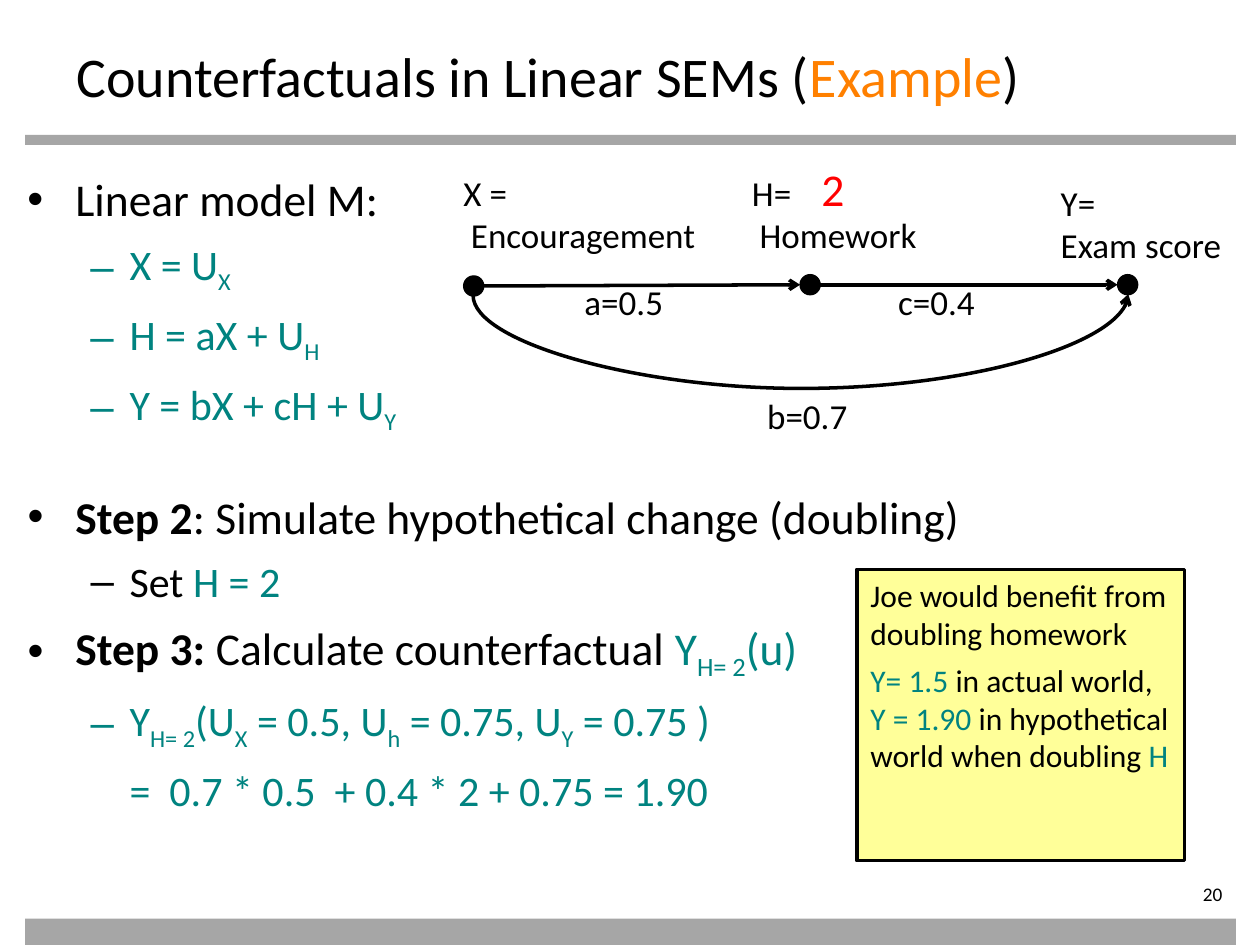
from pptx import Presentation
from pptx.dml.color import RGBColor
from pptx.enum.shapes import MSO_CONNECTOR as CONN, MSO_SHAPE as SHAPE
from pptx.enum.text import PP_ALIGN as ALIGN
from pptx.oxml.ns import qn
from pptx.util import Inches, Pt
from lxml.etree import SubElement

COLORS = {"black": "000000", "orange": "FF8000", "teal": "008380",
          "red": "FF0000", "gray": "A6A6A6", "yellow": "FFFF99"}


def rgb(name):
    return RGBColor.from_string(COLORS[name])


def add_runs(p, text, size=20, color="black", bold=False):
    """Write text in which every second part between bars is a subscript."""
    for i, part in enumerate(text.split("|")):
        if not part:
            continue
        r = p.add_run()
        r.text = part
        r.font.name = "Calibri"
        r.font.size = Pt(size)
        r.font.bold = bold
        r.font.color.rgb = rgb(color)
        if i % 2:
            r.font._element.set("baseline", "-25000")


def add_paragraph(tf, runs, size=20, first=False, bullet=None, left=0, hang=0,
                  gap=0, align=ALIGN.LEFT):
    """Runs are (text, format) pairs; gap is a share of the text size."""
    p = tf.paragraphs[0] if first else tf.add_paragraph()
    pPr = p._p.get_or_add_pPr()
    pPr.set("marL", str(Inches(left)))
    pPr.set("indent", str(-Inches(hang)))
    if bullet:
        SubElement(pPr, qn("a:buFont")).set("typeface", "Arial")
        SubElement(pPr, qn("a:buChar")).set("char", bullet)
    else:
        SubElement(pPr, qn("a:buNone"))
    p.alignment = align
    if gap and not first:
        p.space_before = Pt(gap * size)
    for text, fmt in runs:
        add_runs(p, text, size=size, **fmt)


def add_text(slide, x, y, w, h, wrap=True):
    sp = slide.shapes.add_textbox(Inches(x), Inches(y), Inches(w), Inches(h))
    sp.text_frame.word_wrap = wrap
    return sp.text_frame


def add_filled(slide, kind, x, y, w, h, fill, line=None):
    sp = slide.shapes.add_shape(kind, Inches(x), Inches(y), Inches(w), Inches(h))
    sp.shadow.inherit = False
    sp.fill.solid()
    sp.fill.fore_color.rgb = rgb(fill)
    if line:
        sp.line.color.rgb = rgb("black")
        sp.line.width = Pt(line)
    else:
        sp.line.fill.background()
    return sp


def add_arrow(slide, kind, x1, y1, x2, y2):
    cx = slide.shapes.add_connector(kind, Inches(x1), Inches(y1), Inches(x2), Inches(y2))
    cx.line.color.rgb = rgb("black")
    cx.line.width = Pt(2)
    SubElement(cx.line._get_or_add_ln(), qn("a:tailEnd")).set("type", "arrow")
    SubElement(cx._element.spPr, qn("a:effectLst"))
    return cx


def add_frame(slide, x, w):
    """Title, the two gray bars and the page number."""
    add_filled(slide, SHAPE.RECTANGLE, x, 1.07, w, 0.08, "gray")
    add_filled(slide, SHAPE.RECTANGLE, x, 7.29, w, 0.21, "gray")
    title = [("Counterfactuals in Linear SEMs (", {}),
             ("Example", {"color": "orange"}), (")", {})]
    add_paragraph(add_text(slide, x + 0.31, 0.28, 9, 1.1), title, size=32, first=True)
    tf = add_text(slide, 8.7, 7, 1.1, 0.22)
    tf.margin_left = tf.margin_top = tf.margin_bottom = 0
    add_paragraph(tf, [("20", {})], size=11, first=True, align=ALIGN.RIGHT)


LEVELS = {
    "point": dict(size=26, bullet="•", left=0.38, hang=0.38),
    "sub": dict(size=24, bullet="–", left=0.81, hang=0.31),
    "plain": dict(size=24, left=0.81),
}


def add_outline(slide, x, y, w, h, items):
    """Bulleted text; items are (level, runs) pairs."""
    tf = add_text(slide, x, y, w, h)
    for i, (level, runs) in enumerate(items):
        add_paragraph(tf, runs, first=i == 0, gap=0.3, **LEVELS[level])


def add_label(slide, x, y, w, h, *lines, indent=0, wrap=False):
    tf = add_text(slide, x, y, w, h, wrap)
    for i, line in enumerate(lines):
        add_paragraph(tf, [(line, {})], first=i == 0, left=indent if i else 0)


def add_diagram(slide, x, y):
    """Causal graph X -> H -> Y with a direct curved path from X to Y."""
    dot = 0.16
    nodes = [(x + 0.1, y + 0.96), (x + 2.77, y + 0.95), (x + 5.29, y + 0.95)]
    for nx, ny in nodes:
        add_filled(slide, SHAPE.OVAL, nx, ny, dot, dot, "black", line=0.75)
    for (x1, y1), (x2, y2) in zip(nodes, nodes[1:]):
        add_arrow(slide, CONN.STRAIGHT, x1 + dot, y1 + dot / 2, x2, y2 + dot / 2)

    # The curve is a vertical connector turned by 90 degrees
    mid, top = x + 2.77, y - 1.49
    curve = add_arrow(slide, CONN.CURVE, mid + 0.01, top + 5.2, mid, top)
    spPr = curve._element.spPr
    spPr.find(qn("a:xfrm")).set("rot", str(90 * 60000))
    guide = SubElement(spPr.find(qn("a:prstGeom")).find(qn("a:avLst")), qn("a:gd"))
    guide.set("name", "adj1")
    guide.set("fmla", "val -7500000")

    # Node names, path weights and the new value of H
    add_label(slide, x, y + 0.08, 2.6, 0.77, "X =", "Encouragement", indent=0.06, wrap=True)
    add_label(slide, x + 2.29, y + 0.08, 2.24, 0.77, "H=", "Homework", indent=0.06, wrap=True)
    add_label(slide, x + 4.74, y + 0.16, 1.52, 0.77, "Y=", "Exam score")
    for text, dx, dy in [("a=0.5", 0.96, 0.95), ("c=0.4", 3.45, 0.95), ("b=0.7", 2.41, 1.85)]:
        add_label(slide, x + dx, y + dy, 0.85, 0.44, text)
    tf = add_text(slide, x + 2.84, y, 0.4, 0.54, wrap=False)
    add_paragraph(tf, [("2", {"color": "red"})], size=26, first=True)


def add_note(slide, x, y, w, h, paragraphs):
    sp = add_filled(slide, SHAPE.RECTANGLE, x, y, w, h, "yellow", line=2)
    tf = sp.text_frame
    tf.word_wrap = True
    sp.text_frame._txBody.bodyPr.set("anchor", "t")
    for i, runs in enumerate(paragraphs):
        add_paragraph(tf, runs, size=18, first=i == 0, left=0.01, gap=0.3)


def main():
    prs = Presentation()
    prs.slide_width, prs.slide_height = Inches(10), Inches(7.5)
    slide = prs.slides.add_slide(prs.slide_layouts[6])
    teal, bold = {"color": "teal"}, {"bold": True}

    add_frame(slide, 0.2, 9.61)
    equations = ["X = U|X|", "H = aX + U|H|", "Y = bX + cH + U|Y|"]
    add_outline(slide, 0.12, 1.31, 3.86, 2.44,
                [("point", [("Linear model M:", {})])]
                + [("sub", [(eq, teal)]) for eq in equations])
    add_diagram(slide, 3.58, 1.23)
    add_outline(slide, 0.12, 3.83, 9.28, 2.68, [
        ("point", [("Step 2", bold), (": Simulate hypothetical change (doubling)", {})]),
        ("sub", [("Set ", {}), ("H = 2", teal)]),
        ("point", [("Step 3: ", bold), ("Calculate counterfactual ", {}),
                   ("Y|H= 2|(u)", teal)]),
        ("sub", [("Y|H= 2|(U|X| = 0.5, U|h| = 0.75, U|Y| = 0.75 )", teal)]),
        ("plain", [("=  0.7 * 0.5  + 0.4 * 2 + 0.75 = 1.90", teal)]),
    ])
    add_note(slide, 6.8, 4.52, 2.6, 2.31, [
        [("Joe would benefit from doubling homework", {})],
        [("Y= 1.5", teal), (" in actual world, ", {}), ("Y = 1.90", teal),
         (" in hypothetical world when doubling ", {}), ("H", teal)],
    ])
    prs.save("out.pptx")


if __name__ == "__main__":
    main()
